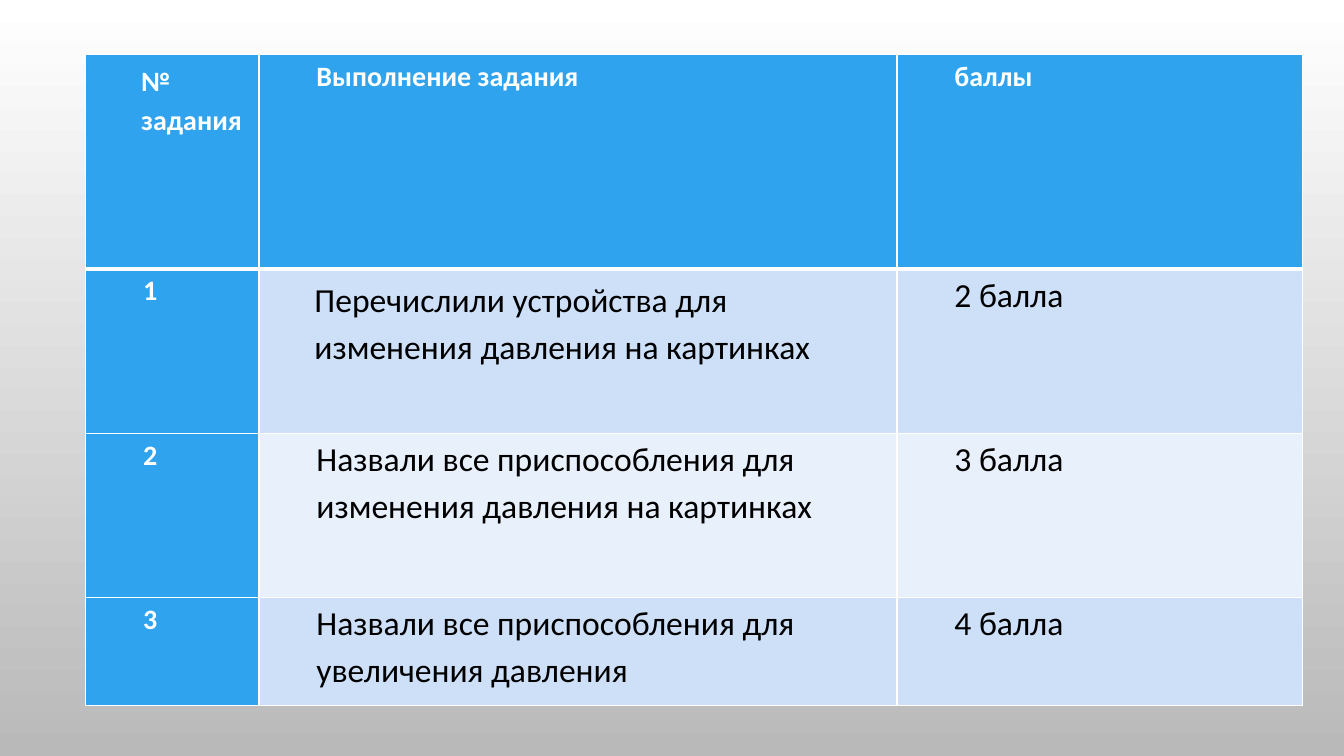
from pptx import Presentation
from pptx.dml.color import RGBColor
from pptx.oxml import parse_xml
from pptx.oxml.ns import nsdecls
from pptx.util import Pt

HEADER = ("№ задания", "Выполнение задания", "баллы")
TASKS = (
    ("1", "Перечислили устройства для изменения давления на картинках", "2 балла"),
    ("2", "Назвали все приспособления для изменения давления на картинках", "3 балла"),
    ("3", "Назвали все приспособления для увеличения давления", "4 балла"),
)
COLUMN_WIDTHS = (123.84, 455.76, 289.44)
ROW_HEIGHTS = (153.36, 117.36, 117.36, 77.04)
PADDED_CELLS = {(0, 0), (1, 1)}


def color(value):
    return RGBColor.from_string(value)


class ScoreSlide:
    """Holds the score table style and draws its elements on one slide."""

    accent = "2FA3EE"
    bands = ("E8F0FC", "CDE0F8")
    line = "FFFFFF"
    heading = {"name": "Calibri", "size": Pt(20), "bold": True}
    body = {"name": "Calibri", "size": Pt(24), "bold": False}

    def __init__(self, deck):
        self.page = deck.slides.add_slide(deck.slide_layouts[6])

    def background(self, top, bottom):
        fill = self.page.background.fill
        fill.gradient()
        fill.gradient_angle = 270
        for stop, value in zip(fill.gradient_stops, (top, bottom)):
            stop.color.rgb = color(value)

    def table(self, left, top, rows):
        frame = self.page.shapes.add_table(
            len(rows), len(COLUMN_WIDTHS), Pt(left), Pt(top),
            Pt(sum(COLUMN_WIDTHS)), Pt(sum(ROW_HEIGHTS)))
        table = frame.table
        table.horz_banding = False
        for column, width in zip(table.columns, COLUMN_WIDTHS):
            column.width = Pt(width)
        for row, height in zip(table.rows, ROW_HEIGHTS):
            row.height = Pt(height)
        for row_number, texts in enumerate(rows):
            for column_number, text in enumerate(texts):
                self.cell(table, row_number, column_number, text)

    def cell(self, table, row, column, text):
        cell = table.cell(row, column)
        is_heading = row == 0 or column == 0
        side, edge = (3.6, 3.6) if (row, column) in PADDED_CELLS else (5.04, 0)
        margins = {"margin_left": side, "margin_right": side,
                   "margin_top": edge, "margin_bottom": edge}
        for name, value in margins.items():
            setattr(cell, name, Pt(value))
        self.borders(cell, {"L": 1, "R": 1, "T": 3 if row == 1 else 1,
                            "B": 3 if row == 0 else 1})
        cell.fill.solid()
        cell.fill.fore_color.rgb = color(self.accent if is_heading else self.bands[row % 2])
        para = cell.text_frame.paragraphs[0]
        para.line_spacing = 1.15
        properties = para._p.get_or_add_pPr()
        properties.set("marL", str(Pt(36)))
        properties.set("indent", "0")
        span = para.add_run()
        span.text = text
        for name, value in (self.heading if is_heading else self.body).items():
            setattr(span.font, name, value)
        span.font.color.rgb = color("FFFFFF" if is_heading else "000000")

    def borders(self, cell, widths):
        properties = cell._tc.get_or_add_tcPr()
        for side, width in widths.items():
            properties.append(parse_xml(
                f'<a:ln{side} {nsdecls("a")} w="{Pt(width)}"><a:solidFill>'
                f'<a:srgbClr val="{self.line}"/></a:solidFill></a:ln{side}>'))


def main():
    deck = Presentation()
    deck.slide_width, deck.slide_height = Pt(960), Pt(540)
    slide = ScoreSlide(deck)
    slide.background("FFFFFF", "B9B9B9")
    slide.table(61.2, 38.88, (HEADER, *TASKS))
    deck.save("out.pptx")


if __name__ == "__main__":
    main()
